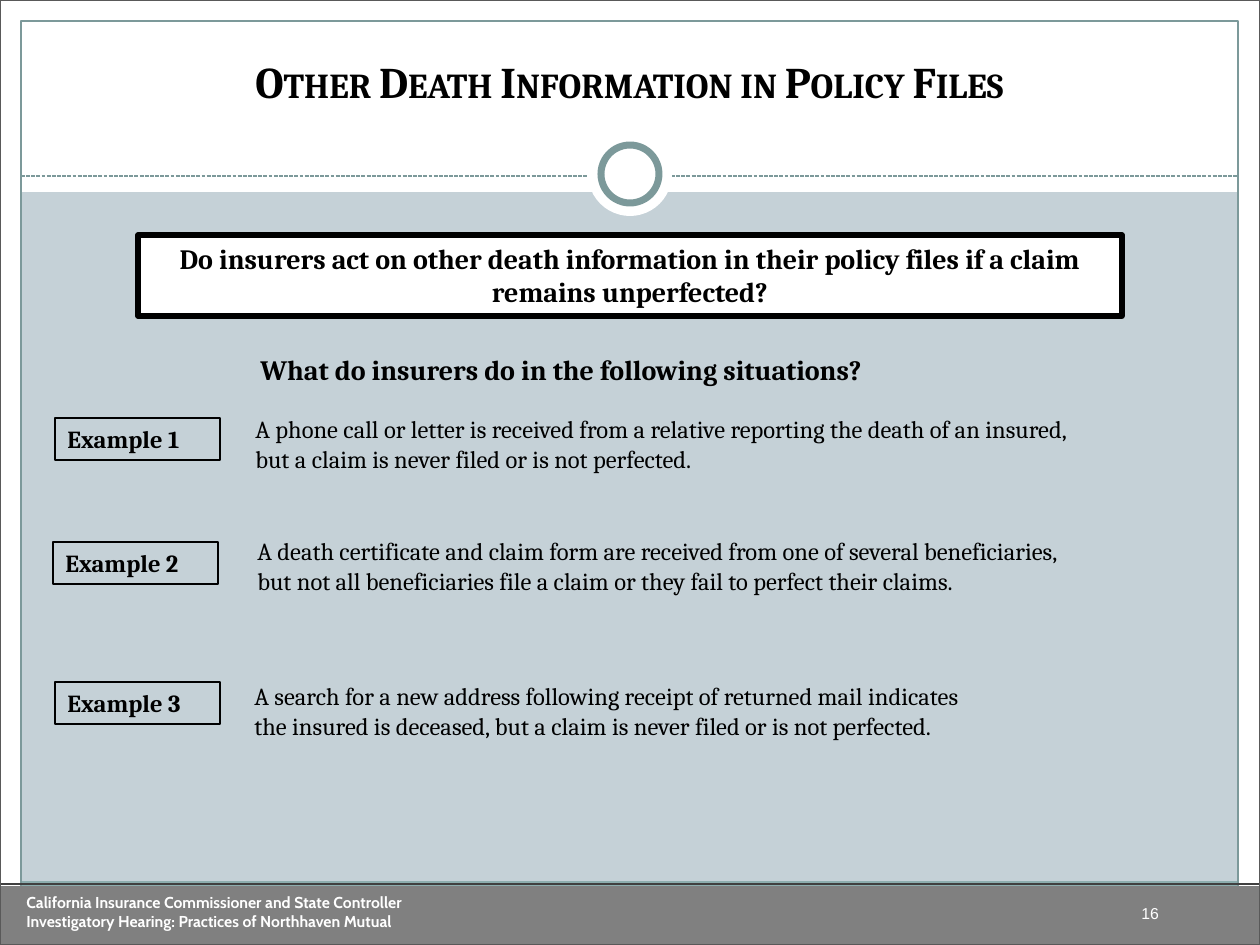
from lxml import etree
from pptx import Presentation
from pptx import util as u
from pptx.dml.color import RGBColor
from pptx.enum import dml, shapes, text
from pptx.oxml.ns import qn

PX = 914400 / 126
WIDTH, HEIGHT = 1260, 945
COLORS = {
    "background": "C5D1D7",
    "white": "FFFFFF",
    "black": "000000",
    "band": "8CADAE",
    "frame": "7C999A",
    "footer": "808080",
    "footer_edge": "404040",
    "slide_edge": "595959",
}
EXAMPLES = [
    # label, label left and top, body left and top, body width, body lines
    ("Example 1", (55, 418), (243, 408), 921,
     ["A phone call or letter is received from a relative reporting the death of an insured,",
      "but a claim is never filed or is not perfected."]),
    ("Example 2", (53, 542), (245, 530), 917,
     ["A death certificate and claim form are received from one of several beneficiaries,",
      "but not all beneficiaries file a claim or they fail to perfect their claims."]),
    ("Example 3", (55, 682), (242, 675), 790,
     ["A search for a new address following receipt of returned mail indicates",
      "the insured is deceased, but a claim is never filed or is not perfected."]),
]


def px(length):
    return u.Emu(round(length * PX))


def color(name):
    return RGBColor.from_string(COLORS[name])


def add_box(slide, left, top, width, height, fill=None, line=None, weight=0.75,
            kind=shapes.MSO_SHAPE.RECTANGLE):
    shape = slide.shapes.add_shape(kind, px(left), px(top), px(width), px(height))
    shape.shadow.inherit = False
    if fill:
        shape.fill.solid()
        shape.fill.fore_color.rgb = color(fill)
    else:
        shape.fill.background()
    if line:
        shape.line.color.rgb = color(line)
        shape.line.width = u.Pt(weight)
    else:
        shape.line.fill.background()
    return shape


def add_circle(slide, center_x, center_y, diameter, **style):
    radius = diameter / 2
    return add_box(slide, center_x - radius, center_y - radius, diameter, diameter,
                   kind=shapes.MSO_SHAPE.OVAL, **style)


def add_rule(slide, left, right, y, line, dash=None):
    connector = slide.shapes.add_connector(
        shapes.MSO_CONNECTOR.STRAIGHT, px(left), px(y), px(right), px(y))
    connector.line.color.rgb = color(line)
    connector.line.width = u.Pt(0.75)
    if dash:
        connector.line.dash_style = dash
    etree.SubElement(connector._element.spPr, qn("a:effectLst"))


def set_text(shape, lines, size=14, font="Cambria", ink="black", bold=False,
             align=text.PP_ALIGN.LEFT, anchor=text.MSO_ANCHOR.TOP, wrap=True,
             small_caps=False):
    frame = shape.text_frame
    frame.word_wrap = wrap
    frame.vertical_anchor = anchor
    for index, line in enumerate(lines):
        paragraph = frame.add_paragraph() if index else frame.paragraphs[0]
        paragraph.alignment = align
        run = paragraph.add_run()
        run.text = line
        run.font.name = font
        run.font.size = u.Pt(size)
        run.font.bold = bold
        run.font.color.rgb = color(ink)
        if small_caps:
            run._r.get_or_add_rPr().set("cap", "small")


def add_text(slide, left, top, width, height, lines, **style):
    box = slide.shapes.add_textbox(px(left), px(top), px(width), px(height))
    set_text(box, lines, **style)


def add_frame(slide):
    # White margins and header
    add_box(slide, 0, 924, WIDTH, 21, fill="white")
    add_box(slide, 0, 0, WIDTH, 192, fill="white")
    for left in (0, WIDTH - 21):
        add_box(slide, left, 0, 21, HEIGHT, fill="white")

    # Band, frame and dashed header rule
    add_box(slide, 21, 881, 1217, 43, fill="band")
    add_box(slide, 21, 21, 1217, 903, line="frame")
    add_rule(slide, 21, 1238, 176, "frame", dash=dml.MSO_LINE.SQUARE_DOT)

    # Ring over the header edge
    add_circle(slide, 630, 174, 84, fill="white")
    add_circle(slide, 630, 174, 58, fill="white", line="frame", weight=4)


def add_footer(slide):
    add_box(slide, 0, 886, WIDTH, 59, fill="footer")
    add_text(slide, 1129, 898, 78, 31, ["16"], size=9, font="Arial", ink="white",
             anchor=text.MSO_ANCHOR.MIDDLE)
    add_rule(slide, 0, WIDTH, 884, "footer_edge")
    add_box(slide, 0, 0, WIDTH, HEIGHT, line="slide_edge")
    add_text(slide, 14, 887, 748, 50,
             ["California Insurance Commissioner and State Controller",
              "Investigatory Hearing: Practices of Northhaven Mutual"],
             size=9, font="Cabin", ink="white", bold=True)


def add_example(slide, label, label_at, body_at, body_width, lines):
    box = add_box(slide, *label_at, 165, 42, line="black", weight=1)
    set_text(box, [label], bold=True)
    add_text(slide, *body_at, body_width, 72, lines, wrap=False)


def main():
    presentation = Presentation()
    presentation.slide_width = px(WIDTH)
    presentation.slide_height = px(HEIGHT)
    slide = presentation.slides.add_slide(presentation.slide_layouts[6])
    slide.background.fill.solid()
    slide.background.fill.fore_color.rgb = color("background")

    add_frame(slide)
    add_footer(slide)

    # Title and main question
    add_text(slide, 38, 49, 1183, 103, ["Other Death Information in Policy Files"],
             size=25, bold=True, align=text.PP_ALIGN.CENTER, small_caps=True)
    question = add_box(slide, 138, 235, 984, 81, fill="white", line="black", weight=3)
    set_text(question,
             ["Do insurers act on other death information in their policy files "
              "if a claim remains unperfected?"],
             size=16, bold=True, align=text.PP_ALIGN.CENTER)

    # Example situations
    add_text(slide, 248, 346, 726, 47,
             ["What do insurers do in the following situations?"],
             size=16, bold=True, wrap=False)
    for example in EXAMPLES:
        add_example(slide, *example)

    presentation.save("out.pptx")


if __name__ == "__main__":
    main()
